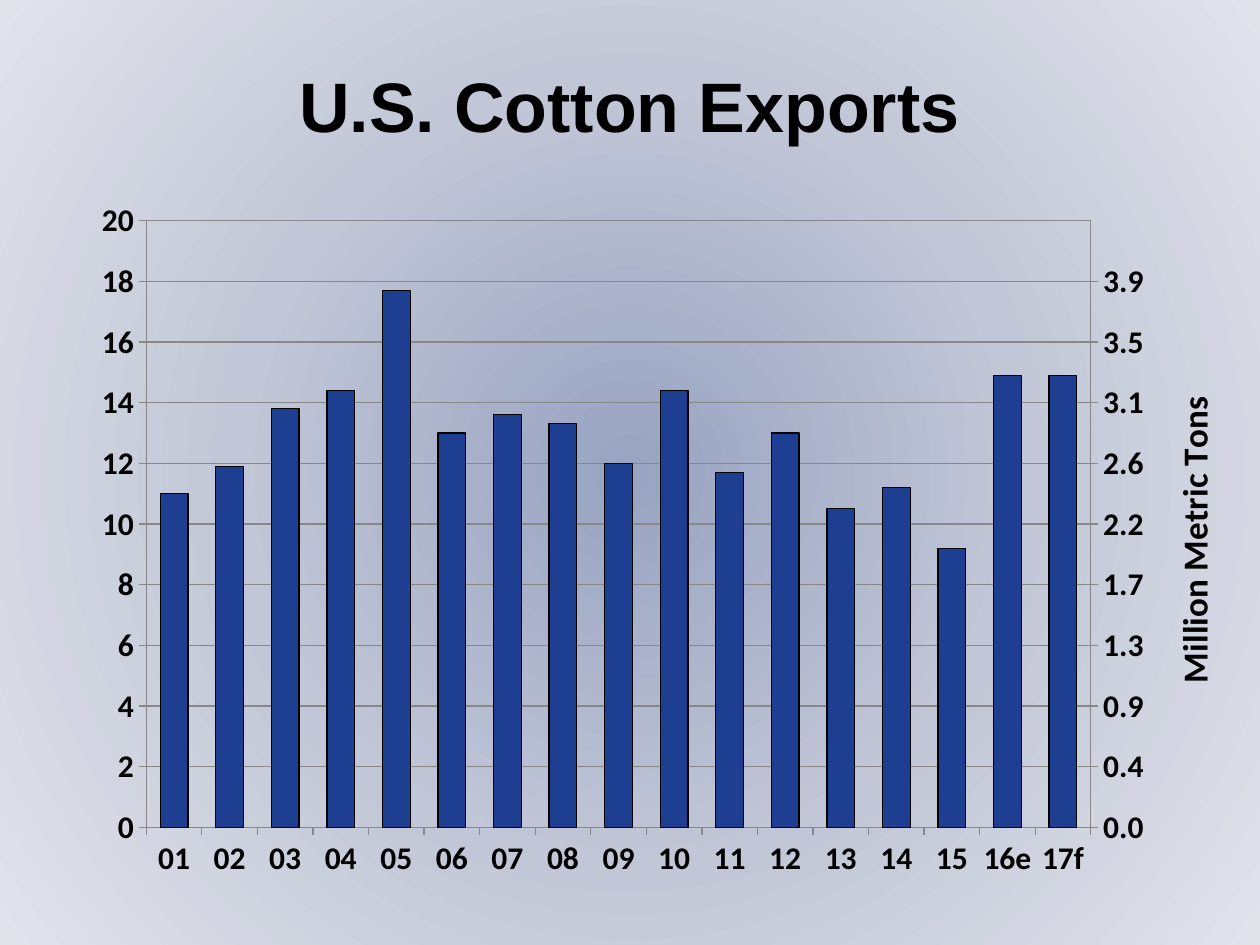
from copy import deepcopy

from lxml import etree
from pptx import Presentation
from pptx.chart.axis import CategoryAxis, ValueAxis
from pptx.chart.data import CategoryChartData
from pptx.dml.color import RGBColor
from pptx.enum import chart as ch, text
from pptx.oxml import parse_xml
from pptx.oxml.ns import nsdecls, qn
from pptx.util import Inches, Pt

TITLE = "U.S. Cotton Exports"
YEARS = [f"{year:02d}" for year in range(1, 16)] + ["16e", "17f"]
BALES = [11, 11.9, 13.8, 14.4, 17.7, 13, 13.6, 13.3, 12, 14.4, 11.7, 13,
         10.5, 11.2, 9.2, 14.9, 14.9]
TONS = [2.4, 2.6, 3, 3.1, 3.9, 2.8, 3, 2.9, 2.6, 3.1, 2.6, 2.8,
        2.3, 2.5, 2, 3.2, 3.2]
# title, number format, maximum
BALES_AXIS = ("Million Bales", "#,##0", 20)
TONS_AXIS = ("Million Metric Tons", "#,##0.0", 4.357298)
AXIS_STEPS = 10
PLOT_AREA = {"x": 0.096, "y": 0.097, "w": 0.79, "h": 0.804}
COLORS = {"text": "000000", "bar": "1E3E92", "outline": "000000", "axis": "888888"}
BACKGROUND = [(0, "98A3C1"), (50, "C2C7D7"), (100, "E1E4EB")]
LEFT, WIDTH = Inches(0.25), Inches(9.49)


def rgb(name):
    return RGBColor.from_string(COLORS[name])


def style_font(font, size, face):
    font.size, font.name, font.bold = Pt(size), face, True
    font.color.rgb = rgb("text")


def paint_background(slide):
    """Radial gradient spreading from the centre of the slide."""
    slide.background.fill.gradient()
    gradient = next(slide.background._cSld.iter(qn("a:gradFill")))
    stops = "".join(f'<a:gs pos="{pos * 1000}"><a:srgbClr val="{color}"/></a:gs>'
                    for pos, color in BACKGROUND)
    gradient.getparent().replace(gradient, parse_xml(
        f'<a:gradFill {nsdecls("a")} rotWithShape="1"><a:gsLst>{stops}</a:gsLst>'
        '<a:path path="circle"><a:fillToRect l="50000" t="50000" r="50000" b="50000"/>'
        '</a:path></a:gradFill>'))


def style_axis(axis):
    axis.major_tick_mark = ch.XL_TICK_MARK.OUTSIDE
    axis.minor_tick_mark = ch.XL_TICK_MARK.NONE
    axis.format.line.color.rgb = rgb("axis")
    style_font(axis.tick_labels.font, 18, "Calibri")


def style_value_axis(axis, title, number_format, maximum):
    style_axis(axis)
    axis.minimum_scale, axis.maximum_scale = 0, maximum
    axis.major_unit = round(maximum / AXIS_STEPS, 5)
    axis.tick_labels.number_format = number_format
    axis.tick_labels.number_format_is_linked = False
    frame = axis.axis_title.text_frame
    frame.text = title
    style_font(frame.paragraphs[0].font, 20, "Calibri")
    turn = frame._txBody.find(qn("a:bodyPr"))
    turn.set("rot", "-5400000")
    turn.set("vert", "horz")


def add_right_axis(chart):
    """Move the second series to its own pair of axes; return the value axis."""
    plot_area = chart._chartSpace.chart.plotArea
    bales_bars = plot_area.find(qn("c:barChart"))
    tons_bars = deepcopy(bales_bars)
    bales_bars.remove(bales_bars.findall(qn("c:ser"))[1])
    tons_bars.remove(tons_bars.find(qn("c:ser")))
    bales_bars.addnext(tons_bars)

    categories = deepcopy(plot_area.find(qn("c:catAx")))
    values = deepcopy(plot_area.find(qn("c:valAx")))
    plot_area.find(qn("c:valAx")).addnext(values)
    values.addnext(categories)
    ids = {node.get("val"): str(5001 + i)
           for i, node in enumerate(bales_bars.findall(qn("c:axId")))}
    for part in (tons_bars, categories, values):
        for node in part.iter(qn("c:axId"), qn("c:crossAx")):
            node.set("val", ids[node.get("val")])

    values.find(qn("c:axPos")).set("val", "r")
    hidden_axis = CategoryAxis(categories)
    hidden_axis.visible = False
    tons_axis = ValueAxis(values)
    tons_axis.has_major_gridlines = False
    hidden_axis.crosses = tons_axis.crosses  # both start from the automatic crossing
    values.find(qn("c:crosses")).set("val", "max")
    return tons_axis


def place_plot(chart):
    plot_area = chart._chartSpace.chart.plotArea
    for layout in plot_area.findall(qn("c:layout")):
        plot_area.remove(layout)
    layout = parse_xml(f'<c:layout {nsdecls("c")}><c:manualLayout/></c:layout>')
    settings = {"layoutTarget": "inner", "xMode": "edge", "yMode": "edge", **PLOT_AREA}
    for tag, value in settings.items():
        etree.SubElement(layout[0], qn(f"c:{tag}")).set("val", str(value))
    plot_area.insert(0, layout)


def add_exports_chart(slide):
    data = CategoryChartData()
    data.categories = YEARS
    data.add_series("Series 1", BALES)
    data.add_series("Series 2", TONS)
    chart = slide.shapes.add_chart(ch.XL_CHART_TYPE.COLUMN_CLUSTERED, LEFT, Inches(1.17),
                                   WIDTH, Inches(5.99), data).chart
    chart.has_legend = chart.has_title = False
    style_font(chart.font, 18, "Calibri")
    plot = chart.plots[0]
    plot.gap_width, plot.vary_by_categories = 100, False

    bales, tons = plot.series
    bales.format.fill.solid()
    bales.format.fill.fore_color.rgb = rgb("bar")
    bales.format.line.color.rgb = rgb("outline")
    bales.format.line.width = Pt(0.75)
    tons.format.fill.background()
    tons.format.line.fill.background()

    style_axis(chart.category_axis)
    chart.category_axis.tick_label_position = ch.XL_TICK_LABEL_POSITION.LOW
    chart.value_axis.has_major_gridlines = True
    chart.value_axis.major_gridlines.format.line.color.rgb = rgb("axis")
    tons_axis = add_right_axis(chart)
    style_value_axis(chart.value_axis, *BALES_AXIS)
    style_value_axis(tons_axis, *TONS_AXIS)
    place_plot(chart)


def add_title(slide):
    frame = slide.shapes.add_textbox(LEFT, Inches(0.33), WIDTH, Inches(1)).text_frame
    frame.word_wrap = True
    frame.vertical_anchor = text.MSO_ANCHOR.MIDDLE
    heading = frame.paragraphs[0]
    heading.text = TITLE
    heading.alignment = text.PP_ALIGN.CENTER
    style_font(heading.font, 40, "Arial")


def main():
    deck = Presentation()
    deck.slide_width, deck.slide_height = Inches(10), Inches(7.5)
    slide = deck.slides.add_slide(deck.slide_layouts[6])
    paint_background(slide)
    add_title(slide)
    add_exports_chart(slide)
    deck.save("out.pptx")


if __name__ == "__main__":
    main()
